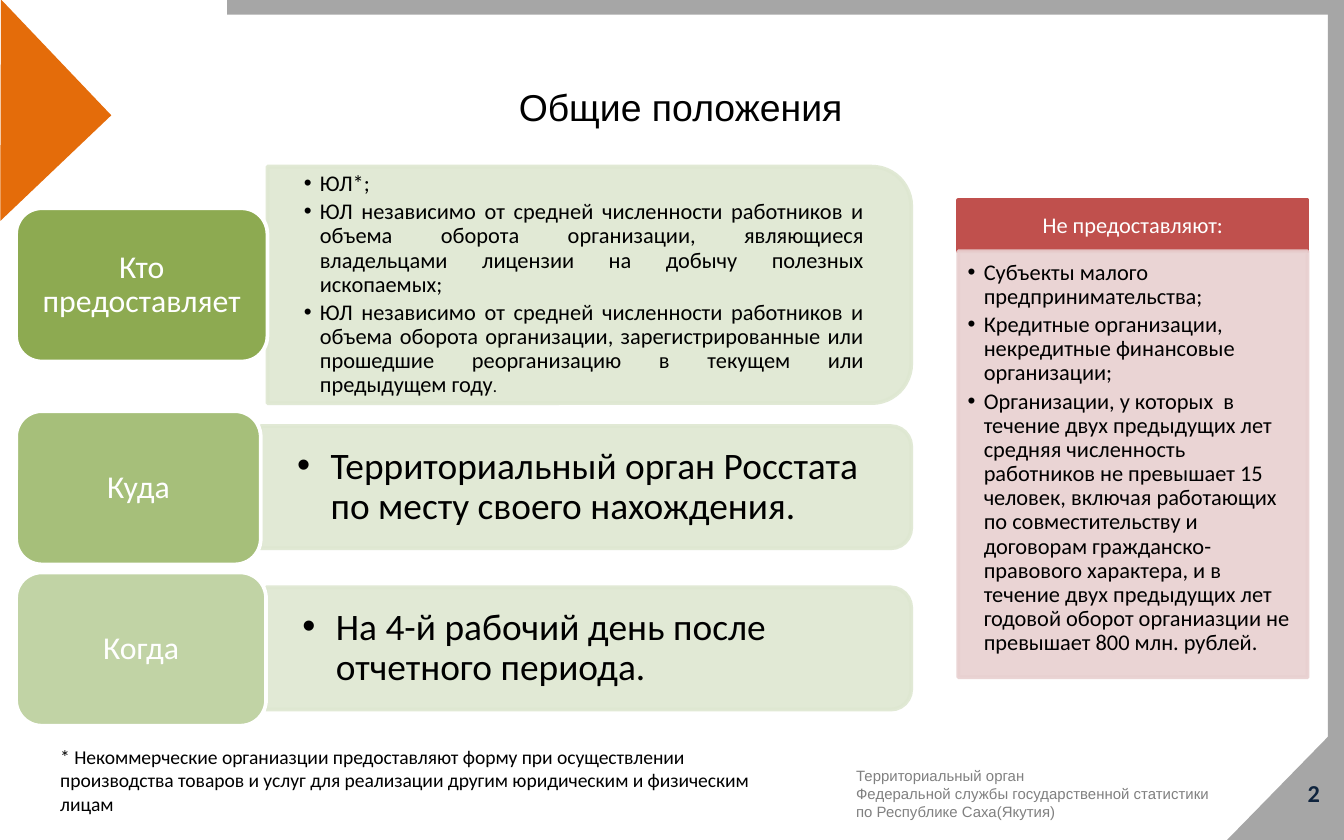
from lxml.etree import SubElement
from pptx import Presentation
from pptx.dml.color import RGBColor
from pptx.enum.shapes import MSO_SHAPE
from pptx.enum.text import MSO_ANCHOR, PP_ALIGN
from pptx.oxml.ns import qn
from pptx.util import Inches, Pt

BLACK = RGBColor(0x00, 0x00, 0x00)
WHITE = RGBColor(0xFF, 0xFF, 0xFF)
GRAY = RGBColor(0xA6, 0xA6, 0xA6)
MUTED = RGBColor(0x80, 0x80, 0x80)
NAVY = RGBColor(0x0F, 0x24, 0x3E)
ORANGE = RGBColor(0xE4, 0x6C, 0x0A)
GREEN = RGBColor(0x8D, 0xAA, 0x51)
OLIVE = RGBColor(0xA6, 0xBF, 0x7A)
SAGE = RGBColor(0xC1, 0xD3, 0xA5)
PALE = RGBColor(0xDE, 0xE7, 0xD1)
RED = RGBColor(0xC0, 0x50, 0x4D)
PINK = RGBColor(0xE8, 0xD0, 0xD0)

prs = Presentation()
prs.slide_width, prs.slide_height = Inches(10), Inches(6.25)
slide = prs.slides.add_slide(prs.slide_layouts[6])


def draw(kind, place, fill, line=None, turn=0, alpha=None):
    """Add a preset shape; alpha is the opacity of fill and line in percent."""
    shape = slide.shapes.add_shape(kind, *[Inches(v) for v in place])
    shape.shadow.inherit = False
    shape.rotation = turn
    shape.fill.solid()
    shape.fill.fore_color.rgb = fill
    if line is None:
        shape.line.fill.background()
    else:
        shape.line.color.rgb = line
        shape.line.width = Pt(2)
    if alpha:
        for color in shape._element.spPr.iter(qn("a:srgbClr")):
            SubElement(color, qn("a:alpha"), val=str(alpha * 1000))
    return shape


def write(target, lines, size, color=BLACK, font="Calibri", align=PP_ALIGN.LEFT,
          anchor=MSO_ANCHOR.MIDDLE, pads=(0.08, 0.04, 0.08, 0.04),
          bullet=None, space=1.0):
    """Fill a shape, or a new text box at the given place; bullet is the indent."""
    if isinstance(target, tuple):
        target = slide.shapes.add_textbox(*[Inches(v) for v in target])
    frame = target.text_frame
    frame.word_wrap = True
    frame.vertical_anchor = anchor
    (frame.margin_left, frame.margin_top,
     frame.margin_right, frame.margin_bottom) = [Inches(v) for v in pads]
    frame.text = "\n".join(lines)
    for para in frame.paragraphs:
        para.alignment = align
        para.line_spacing = space
        if bullet:
            props = para._p.get_or_add_pPr()
            props.set("marL", str(Inches(bullet)))
            props.set("indent", str(-Inches(bullet)))
            SubElement(props, qn("a:buFont"), typeface="Arial")
            SubElement(props, qn("a:buChar"), char="•")
            para.space_after = Pt(size * 0.18)
        para.font.size = Pt(size)
        para.font.name = font
        para.font.color.rgb = color
    return frame


# Frame of the page
draw(MSO_SHAPE.RIGHT_TRIANGLE, (9.12, 5.37, 0.89, 0.87), GRAY, turn=270)
draw(MSO_SHAPE.RECTANGLE, (9.88, 0, 0.12, 5.55), GRAY)
draw(MSO_SHAPE.RECTANGLE, (1.69, 0, 8.19, 0.11), GRAY)
draw(MSO_SHAPE.RIGHT_TRIANGLE, (-0.59, 0.25, 1.19, 1.14), ORANGE, turn=226.4)

write((0.8, 0.56, 8.53, 0.46), ["Общие положения"], 20, font="Arial",
      align=PP_ALIGN.CENTER)
write((6.29, 5.74, 3.71, 0.33),
      ["Территориальный орган",
       "Федеральной службы государственной статистики",
       "по Республике Саха(Якутия)"], 8, MUTED, "Arial")
number = write((9.49, 5.68, 0.41, 0.44), ["2"], 13, NAVY, align=PP_ALIGN.RIGHT)
number.paragraphs[0].font.bold = True

# Rows: label, colour, label top and width, bar top and height, text style, lines
rows = [
    ("Кто предоставляет", GREEN, 1.55, 1.87, 1.24, 1.76, 12, 0.12, PP_ALIGN.JUSTIFY,
     ["ЮЛ*;",
      "ЮЛ независимо от средней численности работников и объема оборота "
      "организации, являющиеся владельцами лицензии на добычу полезных ископаемых;",
      "ЮЛ независимо от средней численности работников и объема оборота "
      "организации, зарегистрированные или прошедшие реорганизацию в текущем "
      "или предыдущем году"]),
    ("Куда", OLIVE, 3.06, 1.82, 3.17, 0.91, 20, 0.25, PP_ALIGN.LEFT,
     ["Территориальный орган Росстата по месту своего нахождения."]),
    ("Когда", SAGE, 4.26, 1.86, 4.37, 0.91, 20, 0.25, PP_ALIGN.LEFT,
     ["На 4-й рабочий день после отчетного периода."]),
]
right = 6.78
frames = []
for label, color, top, width, y, high, size, indent, align, lines in rows:
    left = 0.12 + width
    long = right - left
    mid = y + high / 2
    # The bar is a turned shape, so its sides are swapped around its centre
    draw(MSO_SHAPE.ROUND_2_SAME_RECTANGLE,
         ((left + right - high) / 2, mid - long / 2, high, long),
         PALE, PALE, 90, 90)
    trim = 0.08 if high > 1 else 0.04
    frames.append(write((left, y + trim, long - trim, high - 2 * trim), lines, size,
                        align=align, pads=(0.27, 0.14, 0.27, 0.14),
                        bullet=indent, space=0.9))
    card = draw(MSO_SHAPE.ROUNDED_RECTANGLE, (0.12, top, width, 1.14), color, WHITE)
    write(card, [label], 17, WHITE, align=PP_ALIGN.CENTER,
          pads=(0.12, 0.09, 0.12, 0.09), space=0.9)
dot = frames[0].paragraphs[-1].add_run()
dot.text = "."
dot.font.size = Pt(9)

# Panel of exceptions
head = draw(MSO_SHAPE.RECTANGLE, (7.13, 1.49, 2.6, 0.38), RED, RED)
write(head, ["Не предоставляют:"], 12, WHITE, align=PP_ALIGN.CENTER,
      pads=(0.09, 0.05, 0.09, 0.05), space=0.9)
body = draw(MSO_SHAPE.RECTANGLE, (7.13, 1.87, 2.6, 3.17), PINK, PINK, alpha=90)
write(body,
      ["Субъекты малого предпринимательства;",
       "Кредитные организации, некредитные финансовые организации;",
       "Организации, у которых  в течение двух предыдущих лет средняя численность "
       "работников не превышает 15 человек, включая работающих по совместительству "
       "и договорам гражданско-правового характера, и в течение двух предыдущих "
       "лет годовой оборот органиазции не превышает 800 млн. рублей."],
      12, anchor=MSO_ANCHOR.TOP, pads=(0.07, 0.07, 0.09, 0.1), bullet=0.12, space=0.9)

write((0.35, 5.49, 5.43, 0.63),
      ["* Некоммерческие органиазции предоставляют форму при осуществлении "
       "производства товаров и услуг для реализации другим юридическим и "
       "физическим лицам"],
      10.5, anchor=MSO_ANCHOR.TOP, pads=(0.1, 0.05, 0.1, 0.05))

prs.save("out.pptx")
